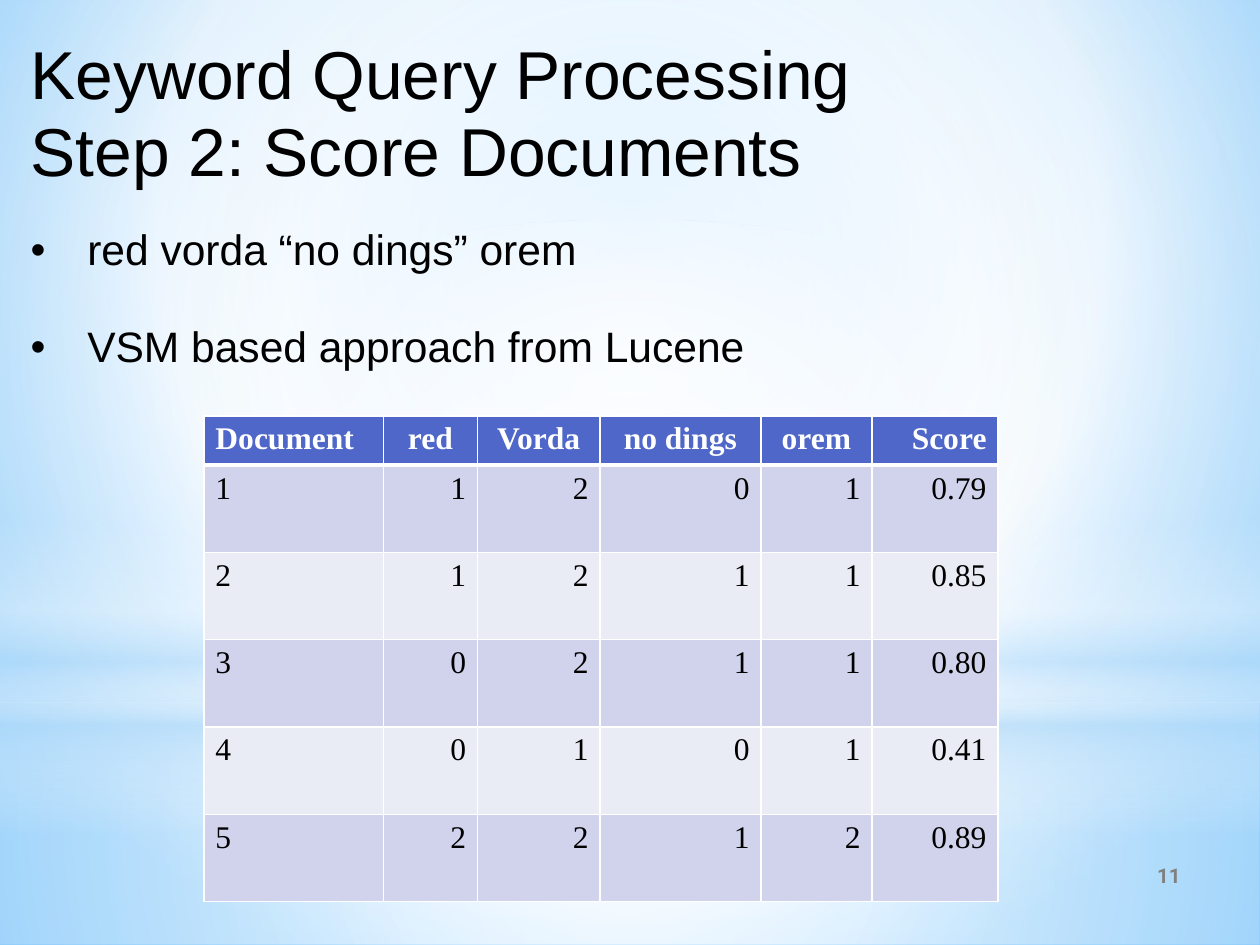
from lxml.etree import SubElement
from pptx import Presentation
from pptx.dml.color import RGBColor
from pptx.enum.shapes import MSO_SHAPE
from pptx.enum.text import MSO_ANCHOR, PP_ALIGN
from pptx.oxml.ns import qn
from pptx.util import Pt

PX = 9144
SLIDE_SIZE = (10160000, 7621588)
WHITE = RGBColor(0xFF, 0xFF, 0xFF)
BLACK = RGBColor(0x00, 0x00, 0x00)
GRAY = RGBColor(0x80, 0x80, 0x80)
SKY = RGBColor(0x9E, 0xD5, 0xFF)
AZURE = RGBColor(0x5B, 0xB9, 0xFF)
MIST = RGBColor(0xB4, 0xDC, 0xFA)
HEADER_FILL = RGBColor(0x4E, 0x67, 0xC8)
BANDS = (RGBColor(0xD0, 0xD3, 0xEB), RGBColor(0xE9, 0xEB, 0xF5))

CENTER = (50, 50, 50, 50)
COLUMNS = (158, 83, 108, 142, 98, 111)
HEADER_HEIGHT = 43
ROW_HEIGHT = 77
SCORES = (
    ("Document", "red", "Vorda", "no dings", "orem", "Score"),
    ("1", "1", "2", "0", "1", "0.79"),
    ("2", "1", "2", "1", "1", "0.85"),
    ("3", "0", "2", "1", "1", "0.80"),
    ("4", "0", "1", "0", "1", "0.41"),
    ("5", "2", "2", "1", "2", "0.89"),
)


def px(*lengths):
    return [length * PX for length in lengths]


def set_gradient(fill, element, stops, focus=None):
    fill.gradient()
    grad = element.find(".//" + qn("a:gradFill"))
    for child in list(grad):
        grad.remove(child)
    stop_list = SubElement(grad, qn("a:gsLst"))
    for position, color, alpha in stops:
        stop = SubElement(stop_list, qn("a:gs"), pos=str(position * 1000))
        srgb = SubElement(stop, qn("a:srgbClr"), val=str(color))
        if alpha < 100:
            SubElement(srgb, qn("a:alpha"), val=str(alpha * 1000))
    if focus:
        circle = SubElement(grad, qn("a:path"), path="circle")
        sides = {side: str(share * 1000) for side, share in zip("ltrb", focus)}
        SubElement(circle, qn("a:fillToRect"), sides)
    else:
        SubElement(grad, qn("a:lin"), ang="5400000", scaled="0")


def add_glow(s, kind, box, stops, focus=None):
    sp = s.shapes.add_shape(kind, *px(*box))
    sp.shadow.inherit = False
    sp.line.fill.background()
    set_gradient(sp.fill, sp.element, stops, focus)


def add_backdrop(s):
    set_gradient(s.background.fill, s.element,
                 ((0, SKY, 100), (60, WHITE, 100), (100, AZURE, 100)),
                 (20, 10, 20, 60))
    add_glow(s, MSO_SHAPE.RECTANGLE, (0, 620, 1111, 213),
             ((0, WHITE, 91), (37, WHITE, 76), (100, MIST, 79)), CENTER)
    add_glow(s, MSO_SHAPE.RECTANGLE, (0, 0, 1111, 620),
             ((0, WHITE, 89), (48, WHITE, 62), (100, MIST, 79)), CENTER)
    add_glow(s, MSO_SHAPE.RECTANGLE, (0, 458, 1111, 278),
             ((0, WHITE, 0), (29, WHITE, 30), (45, MIST, 40),
              (55, WHITE, 26), (65, MIST, 60), (100, WHITE, 0)))
    add_glow(s, MSO_SHAPE.OVAL, (0, 194, 1111, 620),
             ((0, WHITE, 100), (56, WHITE, 0)), CENTER)


def add_run(p, text, size, font, color, bold=False):
    r = p.add_run()
    r.text = text
    r.font.size = Pt(size)
    r.font.name = font
    r.font.color.rgb = color
    r.font.bold = bold


def add_frame(s, box, insets=(0, 0)):
    tf = s.shapes.add_textbox(*px(*box)).text_frame
    tf.word_wrap = True
    tf.margin_left = tf.margin_right = insets[0] * PX
    tf.margin_top = tf.margin_bottom = insets[1] * PX
    return tf


def add_lines(tf, lines, size, gap, bulleted=False):
    for i, line in enumerate(lines):
        p = tf.add_paragraph() if i else tf.paragraphs[0]
        p.line_spacing = 0.95
        p.space_before = Pt(gap if i else 2)
        if bulleted:
            pPr = p._p.get_or_add_pPr()
            pPr.set("marL", str(50 * PX))
            pPr.set("indent", str(-50 * PX))
            SubElement(pPr, qn("a:buFont"), typeface="Arial")
            SubElement(pPr, qn("a:buChar"), char="•")
        add_run(p, line, size, "Arial", BLACK)


def add_page_number(s, number):
    tf = add_frame(s, (830, 750, 222, 44), (11, 6))
    tf.vertical_anchor = MSO_ANCHOR.MIDDLE
    p = tf.paragraphs[0]
    p.alignment = PP_ALIGN.RIGHT
    add_run(p, number, 13, "Roboto", GRAY, True)


def set_borders(cell, widths):
    tcPr = cell._tc.get_or_add_tcPr()
    for side, width in zip("LRTB", widths):
        line = SubElement(tcPr, qn("a:ln" + side), w=str(Pt(width)))
        solid = SubElement(line, qn("a:solidFill"))
        SubElement(solid, qn("a:srgbClr"), val=str(WHITE))


def cell_alignment(row, column):
    if column == 0:
        return PP_ALIGN.LEFT
    if row == 0 and column < len(COLUMNS) - 1:
        return PP_ALIGN.CENTER
    return PP_ALIGN.RIGHT


def add_score_table(s, left, top):
    height = HEADER_HEIGHT + ROW_HEIGHT * (len(SCORES) - 1)
    table = s.shapes.add_table(len(SCORES), len(COLUMNS),
                               *px(left, top, sum(COLUMNS), height)).table
    for column, width in zip(table.columns, COLUMNS):
        column.width = width * PX
    for i, values in enumerate(SCORES):
        header = i == 0
        table.rows[i].height = (HEADER_HEIGHT if header else ROW_HEIGHT) * PX
        for j, value in enumerate(values):
            cell = table.cell(i, j)
            set_borders(cell, (1, 1, 1, 3 if header else 1))
            cell.fill.solid()
            cell.fill.fore_color.rgb = HEADER_FILL if header else BANDS[(i - 1) % 2]
            p = cell.text_frame.paragraphs[0]
            p.alignment = cell_alignment(i, j)
            add_run(p, value, 20, "Times New Roman", WHITE if header else BLACK, header)


def main():
    prs = Presentation()
    prs.slide_width, prs.slide_height = SLIDE_SIZE
    s = prs.slides.add_slide(prs.slide_layouts[6])
    add_backdrop(s)
    add_page_number(s, "11")
    add_lines(add_frame(s, (27, 33, 1057, 100)),
              ("Keyword Query Processing", "Step 2: Score Documents"), 43, 0)
    add_lines(add_frame(s, (27, 200, 1057, 600)),
              ("red vorda “no dings” orem", "VSM based approach from Lucene"),
              27, 30.5, bulleted=True)
    add_score_table(s, 180, 367)
    prs.save("out.pptx")


if __name__ == "__main__":
    main()
